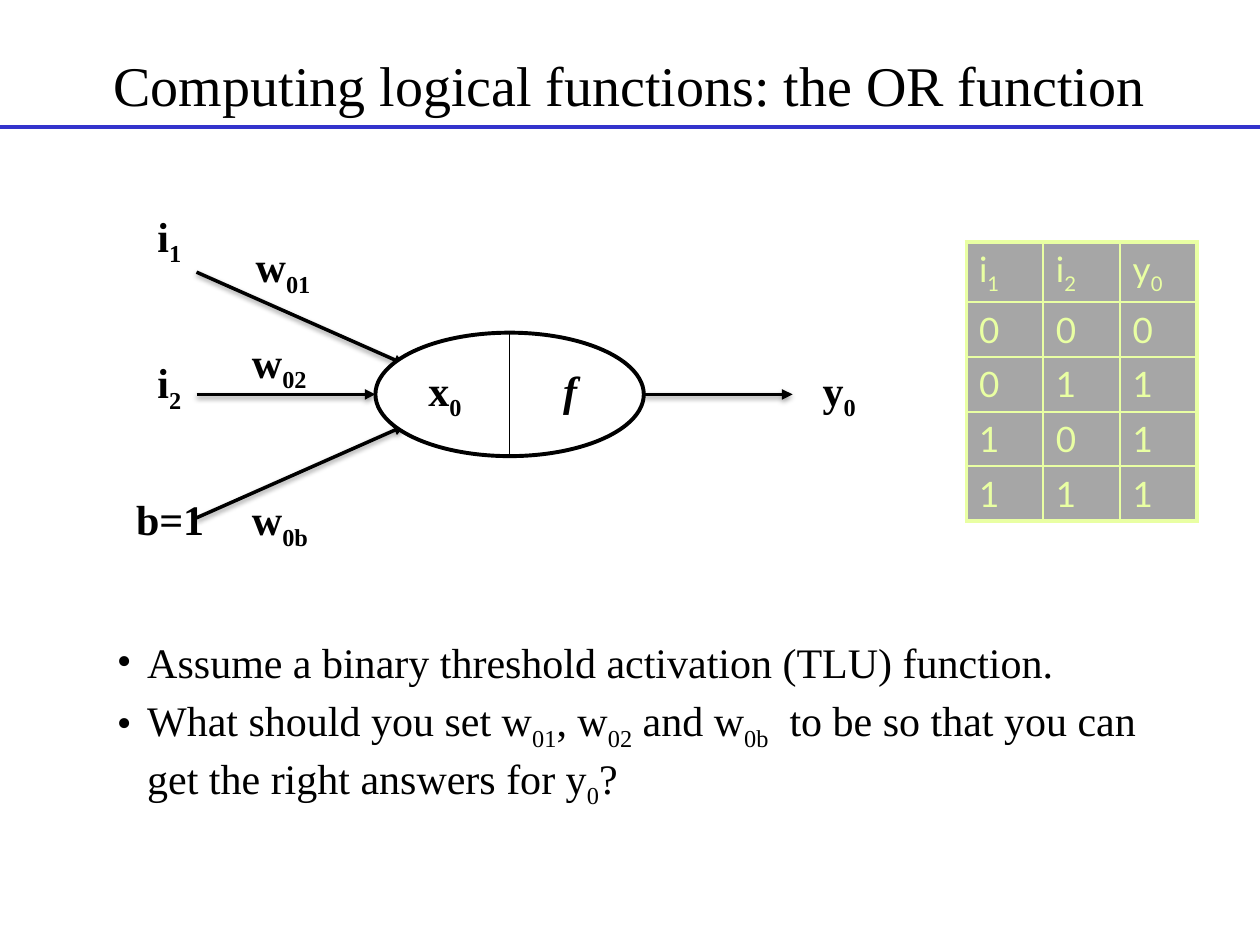
from dataclasses import dataclass

from lxml import etree
from pptx import Presentation
from pptx.dml.color import RGBColor
from pptx.enum.shapes import MSO_CONNECTOR, MSO_SHAPE
from pptx.enum.text import MSO_ANCHOR, PP_ALIGN
from pptx.oxml.ns import qn
from pptx.util import Emu, Inches, Pt

STRAIGHT = MSO_CONNECTOR.STRAIGHT
OVAL = MSO_SHAPE.OVAL
TOP = MSO_ANCHOR.TOP
CENTER = PP_ALIGN.CENTER
LEFT = PP_ALIGN.LEFT

SERIF = "Times New Roman"
SANS = "Lato"
BLACK, WHITE, BLUE, LIME, GRAY = "000000", "FFFFFF", "3333CC", "E9FFA3", "A6A6A6"
GRID_UNIT = Inches(0.1)
COLUMNS, ROWS = 100, 75


@dataclass
class Box:
    left: float
    top: float
    width: float
    height: float

    def inner(self, left, top, width, height):
        return Box(self.left + left, self.top + top, width, height)

    def lengths(self):
        return [grid(n) for n in (self.left, self.top, self.width, self.height)]


def grid(count):
    return Emu(round(count * GRID_UNIT))


def color(value):
    return RGBColor.from_string(value)


def child(parent, tag, **attributes):
    return etree.SubElement(parent, qn(tag), attributes)


def write(para, text, size, font=SERIF, fill=BLACK, bold=False, italic=False):
    for index, part in enumerate(text.split("_")):
        if not part:
            continue
        span = para.add_run()
        span.text = part
        span.font.size = Pt(size)
        span.font.name = font
        span.font.bold = bold
        span.font.italic = italic
        span.font.color.rgb = color(fill)
        if index % 2:
            span.font._element.set("baseline", "-25000")


def text_frame(shapes, box, margins=(0, 0, 0, 0)):
    frame = shapes.add_textbox(*box.lengths()).text_frame
    frame.word_wrap = True
    frame.vertical_anchor = TOP
    frame.margin_left, frame.margin_top, frame.margin_right, frame.margin_bottom = map(grid, margins)
    return frame


def line(shapes, box, start, end, fill=BLACK, width=2, arrow=False):
    points = [grid(n) for x, y in (start, end) for n in (box.left + x, box.top + y)]
    connector = shapes.add_connector(STRAIGHT, *points)
    connector.line.color.rgb = color(fill)
    connector.line.width = Pt(width)
    properties = connector._element.spPr
    if arrow:
        child(connector.line._get_or_add_ln(), "a:tailEnd", type="triangle")
    effects = child(properties, "a:effectLst")
    if arrow:
        shadow = child(effects, "a:outerShdw", blurRad=str(Pt(3.1)), dist=str(Pt(1.6)),
                       dir="5400000", rotWithShape="0")
        child(child(shadow, "a:srgbClr", val=BLACK), "a:alpha", val="38000")


def add_title(page, box, text):
    line(page.shapes, Box(0, 10.1, COLUMNS, 0), (0, 0), (COLUMNS, 0), BLUE, 2.25)
    para = text_frame(page.shapes, box, (1, 1, 1, 0.5)).paragraphs[0]
    para.alignment = CENTER
    write(para, text, 32)


def add_bullets(page, box, items):
    frame = text_frame(page.shapes, box, (1, 0.5, 1, 0.5))
    for index, text in enumerate(items):
        para = frame.add_paragraph() if index else frame.paragraphs[0]
        para.alignment = LEFT
        para.space_before = Pt(4.8)
        properties = para._p.get_or_add_pPr()
        properties.set("marL", str(Inches(0.24)))
        properties.set("indent", str(Inches(-0.24)))
        child(properties, "a:buFont", typeface=SERIF)
        child(properties, "a:buChar", char="•")
        write(para, text, 24)


def add_network(page, box):
    shapes = page.shapes.add_group_shape().shapes
    cell = box.inner(19, 9.7, 21.3, 9.8)
    middle = 14.6
    right = 19 + cell.width
    arrows = [
        ((4.8, 4.9), (21.3, 12.2)),
        ((4.8, middle), (19, middle)),
        ((4.8, 24.4), (21.3, 17.1)),
        ((right, middle), (right + 11.8, middle)),
    ]
    for start, end in arrows:
        line(shapes, box, start, end, arrow=True)

    neuron = shapes.add_shape(OVAL, *cell.lengths())
    neuron.shadow.inherit = False
    neuron.fill.solid()
    neuron.fill.fore_color.rgb = color(WHITE)
    neuron.line.color.rgb = color(BLACK)
    neuron.line.width = Pt(2.25)
    line(shapes, cell, (cell.width / 2, 0), (cell.width / 2, cell.height), width=0.75)

    labels = [
        ("x_0", 23.2, 12.2, 4.3), ("f", 33.9, 12.2, 2.1), ("i_1", 1.7, 0, 4.7),
        ("w_01", 9.5, 2.4, 4.7), ("y_0", 54.5, 12.2, 4.7), ("i_2", 1.7, 11.6, 4.7),
        ("b=1", 0, 22.5, 6.4), ("w_02", 9.2, 10, 4.7), ("w_0b", 9.2, 22.5, 4.7),
    ]
    for text, left, top, width in labels:
        frame = text_frame(shapes, box.inner(left, top, width, 4.9))
        write(frame.paragraphs[0], text, 24, bold=True, italic=text == "f")


def add_borders(cell, outer):
    properties = cell._tc.get_or_add_tcPr()
    for index, (tag, is_outer) in enumerate(zip(("a:lnL", "a:lnR", "a:lnT", "a:lnB"), outer)):
        border = etree.Element(qn(tag), w=str(Pt(2.25 if is_outer else 1.5)))
        child(child(border, "a:solidFill"), "a:srgbClr", val=LIME)
        properties.insert(index, border)


def add_truth_table(page, box, rows):
    last_row, last_column = len(rows) - 1, len(rows[0]) - 1
    table = page.shapes.add_table(len(rows), len(rows[0]), *box.lengths()).table
    for column in table.columns:
        column.width = grid(box.width / len(rows[0]))
    for r, values in enumerate(rows):
        table.rows[r].height = grid(box.height / len(rows))
        for c, text in enumerate(values):
            cell = table.cell(r, c)
            cell.fill.solid()
            cell.fill.fore_color.rgb = color(GRAY)
            add_borders(cell, (c == 0, c == last_column, r == 0, r == last_row))
            write(cell.text_frame.paragraphs[0], text, 20, SANS, LIME)


def main():
    deck = Presentation()
    deck.slide_width, deck.slide_height = grid(COLUMNS), grid(ROWS)
    page = deck.slides.add_slide(deck.slide_layouts[6])
    add_title(page, Box(5, 3, 90, 12.5), "Computing logical functions: the OR function")
    add_bullets(page, Box(8.3, 50, 87.5, 20), [
        "Assume a binary threshold activation (TLU) function.",
        "What should you set w_01_, w_02_ and w_0b_  to be so that you can get the right answers for y_0_?",
    ])
    inputs = [(a, b) for a in (0, 1) for b in (0, 1)]
    add_truth_table(page, Box(76.7, 19.2, 18.3, 21.7),
                    [("i_1", "i_2", "y_0")] + [(str(a), str(b), str(a | b)) for a, b in inputs])
    add_network(page, Box(10.8, 16.7, 59.2, 27.4))
    deck.save("out.pptx")


if __name__ == "__main__":
    main()
